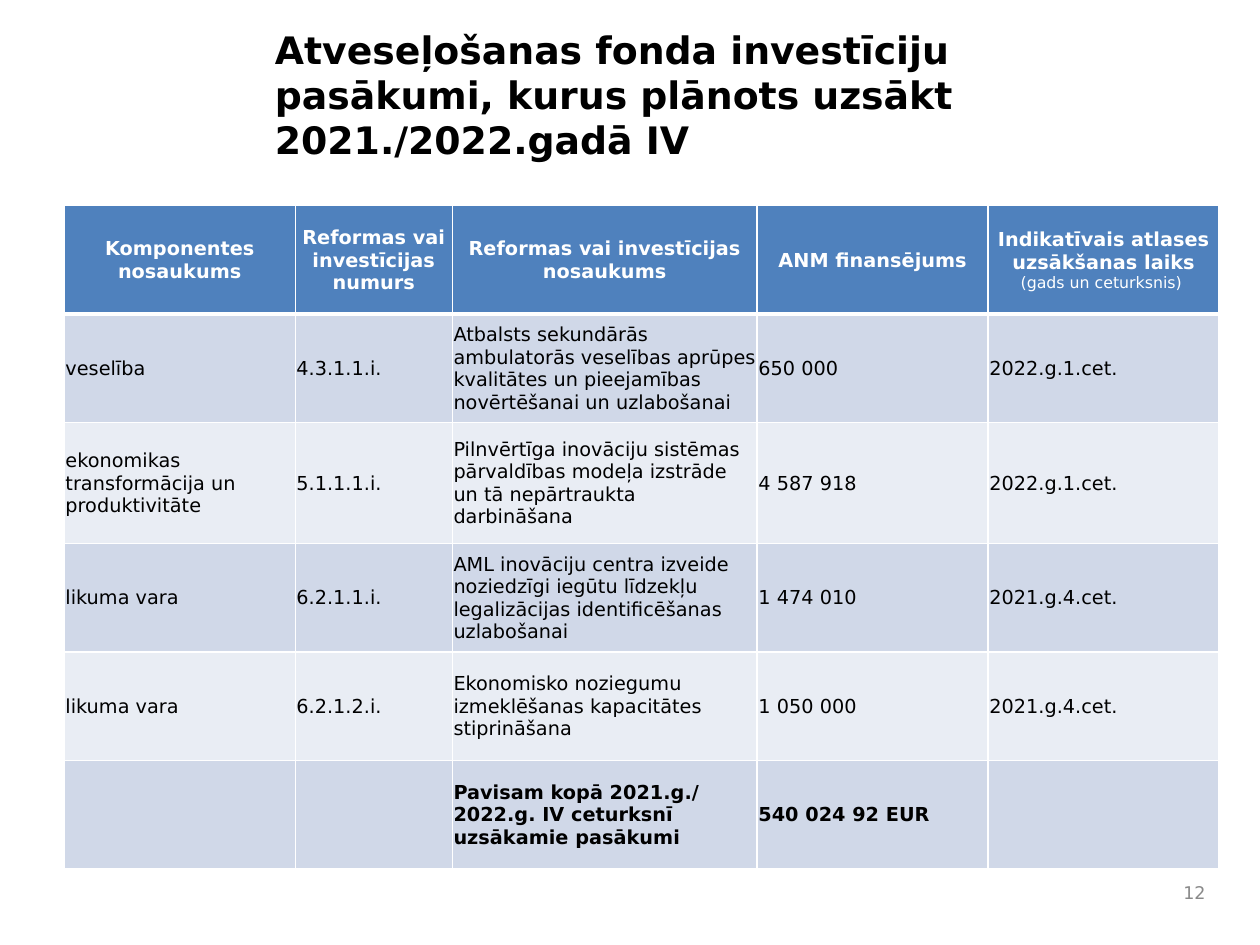
from lxml import etree
from pptx import Presentation
from pptx.dml.color import RGBColor
from pptx.enum import text
from pptx.oxml.ns import qn
from pptx.util import Pt

FONT = "DejaVu Sans"
BLACK = RGBColor(0x00, 0x00, 0x00)
WHITE = RGBColor(0xFF, 0xFF, 0xFF)
GREY = RGBColor(0x89, 0x89, 0x89)
HEADER_BLUE = RGBColor(0x4F, 0x81, 0xBD)
BANDS = [RGBColor(0xD0, 0xD8, 0xE8), RGBColor(0xE9, 0xED, 0xF4)]

# Content
TITLE = "Atveseļošanas fonda investīciju pasākumi, kurus plānots uzsākt 2021./2022.gadā IV"
PAGE_NUMBER = "12"
HEADINGS = ["Komponentes nosaukums", "Reformas vai investīcijas numurs",
            "Reformas vai investīcijas nosaukums", "ANM finansējums",
            "Indikatīvais atlases uzsākšanas laiks "]
HEADING_NOTE = "(gads un ceturksnis) "
MEASURES = [
    ("veselība", "4.3.1.1.i.",
     "Atbalsts sekundārās ambulatorās veselības aprūpes kvalitātes un "
     "pieejamības novērtēšanai un uzlabošanai", "650 000", "2022.g.1.cet."),
    ("ekonomikas transformācija un produktivitāte", "5.1.1.1.i.",
     "Pilnvērtīga inovāciju sistēmas pārvaldības modeļa izstrāde un tā "
     "nepārtraukta darbināšana", "4 587 918", "2022.g.1.cet."),
    ("likuma vara", "6.2.1.1.i.",
     "AML inovāciju centra izveide noziedzīgi iegūtu līdzekļu legalizācijas "
     "identificēšanas uzlabošanai", "1 474 010", "2021.g.4.cet."),
    ("likuma vara", "6.2.1.2.i.",
     "Ekonomisko noziegumu izmeklēšanas kapacitātes stiprināšana",
     "1 050 000", "2021.g.4.cet."),
]
TOTAL = ("", "", "Pavisam kopā 2021.g./ 2022.g. IV ceturksnī uzsākamie pasākumi",
         "540 024 92 EUR", "")

# Layout in points
COLUMN_WIDTHS = [132, 89.75, 174.25, 132, 132]
ROW_HEIGHTS = [62, 62, 69, 62, 62, 62]
TABLE_LEFT, TABLE_TOP = 36.75, 117.5


def style(font, size, color, bold=False):
    font.name, font.size, font.bold = FONT, Pt(size), bold
    font.color.rgb = color


def add_text(slide, box, words, size, color, bold=False,
             align=text.PP_ALIGN.LEFT, anchor=text.MSO_ANCHOR.TOP):
    frame = slide.shapes.add_textbox(*map(Pt, box)).text_frame
    frame.word_wrap = True
    frame.vertical_anchor = anchor
    paragraph = frame.paragraphs[0]
    paragraph.text = words
    paragraph.alignment = align
    style(paragraph.font, size, color, bold)


def add_borders(cell, top, bottom):
    """White cell borders; they must come before the fill."""
    properties = cell._tc.get_or_add_tcPr()
    for side, width in (("L", 1), ("R", 1), ("T", top), ("B", bottom)):
        line = etree.SubElement(properties, qn(f"a:ln{side}"), w=str(Pt(width)))
        fill = etree.SubElement(line, qn("a:solidFill"))
        etree.SubElement(fill, qn("a:srgbClr"), val=str(WHITE))


def fill_cell(cell, words, row, last_row):
    header = row == 0
    add_borders(cell, top=3 if row == 1 else 1, bottom=3 if header else 1)
    cell.fill.solid()
    cell.fill.fore_color.rgb = HEADER_BLUE if header else BANDS[(row - 1) % 2]
    cell.vertical_anchor = text.MSO_ANCHOR.MIDDLE
    cell.margin_left = cell.margin_right = cell.margin_top = Pt(0.7)
    cell.margin_bottom = 0
    paragraph = cell.text_frame.paragraphs[0]
    paragraph.text = words
    paragraph.alignment = text.PP_ALIGN.CENTER if header else text.PP_ALIGN.LEFT
    style(paragraph.font, 11, WHITE if header else BLACK, header or row == last_row)


def add_measures_table(slide):
    rows = [HEADINGS, *MEASURES, TOTAL]
    table = slide.shapes.add_table(
        len(rows), len(HEADINGS), Pt(TABLE_LEFT), Pt(TABLE_TOP),
        Pt(sum(COLUMN_WIDTHS)), Pt(sum(ROW_HEIGHTS))).table
    for column, width in zip(table.columns, COLUMN_WIDTHS):
        column.width = Pt(width)
    for table_row, height in zip(table.rows, ROW_HEIGHTS):
        table_row.height = Pt(height)
    for r, row in enumerate(rows):
        for c, words in enumerate(row):
            fill_cell(table.cell(r, c), words, r, len(rows) - 1)
    # Smaller note in the last heading
    note = table.cell(0, len(HEADINGS) - 1).text_frame.paragraphs[0].add_run()
    note.text = HEADING_NOTE
    style(note.font, 9, WHITE)


def main():
    deck = Presentation()
    deck.slide_width, deck.slide_height = Pt(720), Pt(540)
    slide = deck.slides.add_slide(deck.slide_layouts[6])
    add_text(slide, (150, 11.5, 480, 81.5), TITLE, 21.6, BLACK, bold=True)
    add_text(slide, (663, 498.5, 33, 23.5), PAGE_NUMBER, 10, GREY,
             align=text.PP_ALIGN.RIGHT, anchor=text.MSO_ANCHOR.MIDDLE)
    add_measures_table(slide)
    deck.save("out.pptx")


if __name__ == "__main__":
    main()
